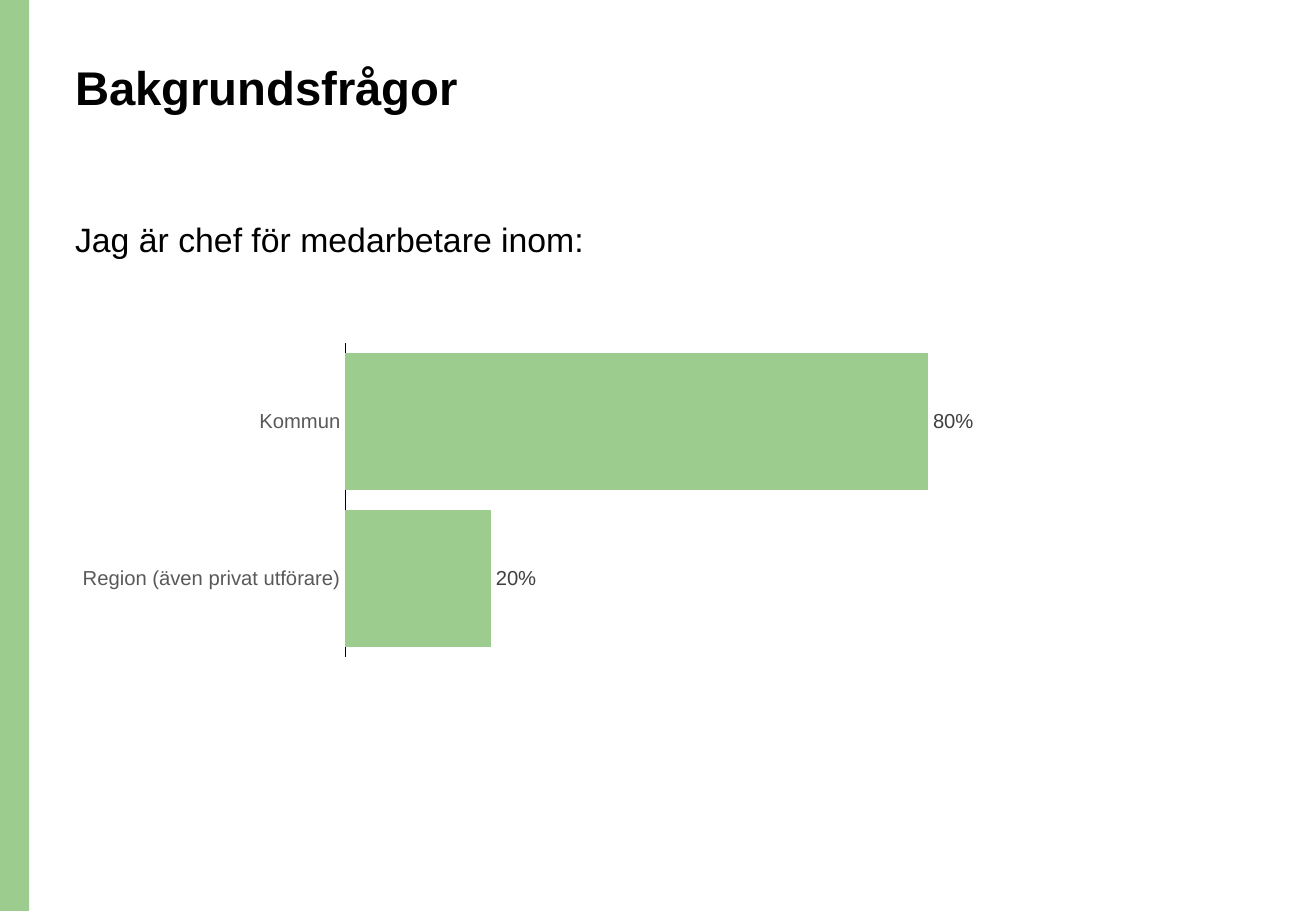
from lxml.etree import SubElement
from pptx import Presentation
from pptx.chart.data import CategoryChartData
from pptx.dml.color import RGBColor
from pptx.enum.chart import XL_CHART_TYPE, XL_LABEL_POSITION, XL_TICK_MARK
from pptx.enum.shapes import MSO_SHAPE
from pptx.enum.text import MSO_ANCHOR
from pptx.oxml.ns import qn
from pptx.util import Cm, Pt

GREEN = RGBColor(0x9D, 0xCC, 0x8F)
BLACK = RGBColor(0, 0, 0)
GREY = RGBColor(0x59, 0x59, 0x59)
DARK = RGBColor(0x40, 0x40, 0x40)
FONT = "Arial"
WIDTH, HEIGHT = Cm(27.51), Cm(19.05)
LEFT = Cm(1.32)


def style(font, size, color, bold=False):
    font.name, font.size, font.bold = FONT, Pt(size), bold
    font.color.rgb = color


def add_text(slide, text, box, size=20, color=BLACK, bold=False):
    frame = slide.shapes.add_textbox(*box).text_frame
    frame.word_wrap = True
    frame.vertical_anchor = MSO_ANCHOR.TOP
    line = frame.paragraphs[0]
    line.line_spacing = 0.9
    run = line.add_run()
    run.text = text
    style(run.font, size, color, bold)


def add_band(slide, box):
    band = slide.shapes.add_shape(MSO_SHAPE.RECTANGLE, *box)
    band.shadow.inherit = False
    band.fill.solid()
    band.fill.fore_color.rgb = GREEN
    band.line.fill.background()


def set_plot(chart, **area):
    """Fix the inner plot area, as shares of the chart's size."""
    plot = chart.element.find(".//" + qn("c:plotArea"))
    for old in plot.findall(qn("c:layout")):
        plot.remove(old)
    layout = SubElement(plot, qn("c:layout"))
    plot.insert(0, layout)
    manual = SubElement(layout, qn("c:manualLayout"))
    modes = {"layoutTarget": "inner", "xMode": "edge", "yMode": "edge"}
    for key, val in {**modes, **area}.items():
        SubElement(manual, qn("c:" + key)).set("val", str(val))


def add_bars(slide, box):
    data = CategoryChartData(number_format="0%")
    data.categories = ["Kommun", "Region (även privat utförare)"]
    data.add_series("Series 1", [0.8, 0.2])
    chart = slide.shapes.add_chart(
        XL_CHART_TYPE.BAR_CLUSTERED, *box, data).chart
    chart.has_legend = chart.has_title = False
    style(chart.font, 10, BLACK)
    set_plot(chart, x=0.295, y=0.02, w=0.686, h=0.957)

    cats = chart.category_axis
    cats.reverse_order = True
    cats.major_tick_mark = cats.minor_tick_mark = XL_TICK_MARK.NONE
    cats.format.line.color.rgb = BLACK
    cats.format.line.width = Pt(0.75)
    style(cats.tick_labels.font, 12, GREY)

    scale = chart.value_axis
    scale.minimum_scale, scale.maximum_scale = 0, 0.9
    scale.has_major_gridlines = False
    scale.visible = False

    plot = chart.plots[0]
    plot.gap_width = 15
    plot.vary_by_categories = False
    fill = plot.series[0].format.fill
    fill.solid()
    fill.fore_color.rgb = GREEN
    plot.has_data_labels = True
    labels = plot.data_labels
    labels.show_value = True
    labels.number_format = "0%"
    labels.number_format_is_linked = False
    labels.position = XL_LABEL_POSITION.OUTSIDE_END
    style(labels.font, 12, DARK)


def main():
    deck = Presentation()
    deck.slide_width, deck.slide_height = WIDTH, HEIGHT
    slide = deck.slides.add_slide(deck.slide_layouts[6])
    add_band(slide, (0, 0, Cm(0.61), HEIGHT))
    add_text(slide, "Jag är chef för medarbetare inom:",
             (LEFT, Cm(4.55), Cm(15.32), Cm(1.88)))
    add_text(slide, "Bakgrundsfrågor",
             (LEFT, Cm(1.22), Cm(23.72), Cm(2.59)), size=28, bold=True)
    add_bars(slide, (LEFT, Cm(7.04), Cm(19.99), Cm(6.86)))
    deck.save("out.pptx")


if __name__ == "__main__":
    main()
